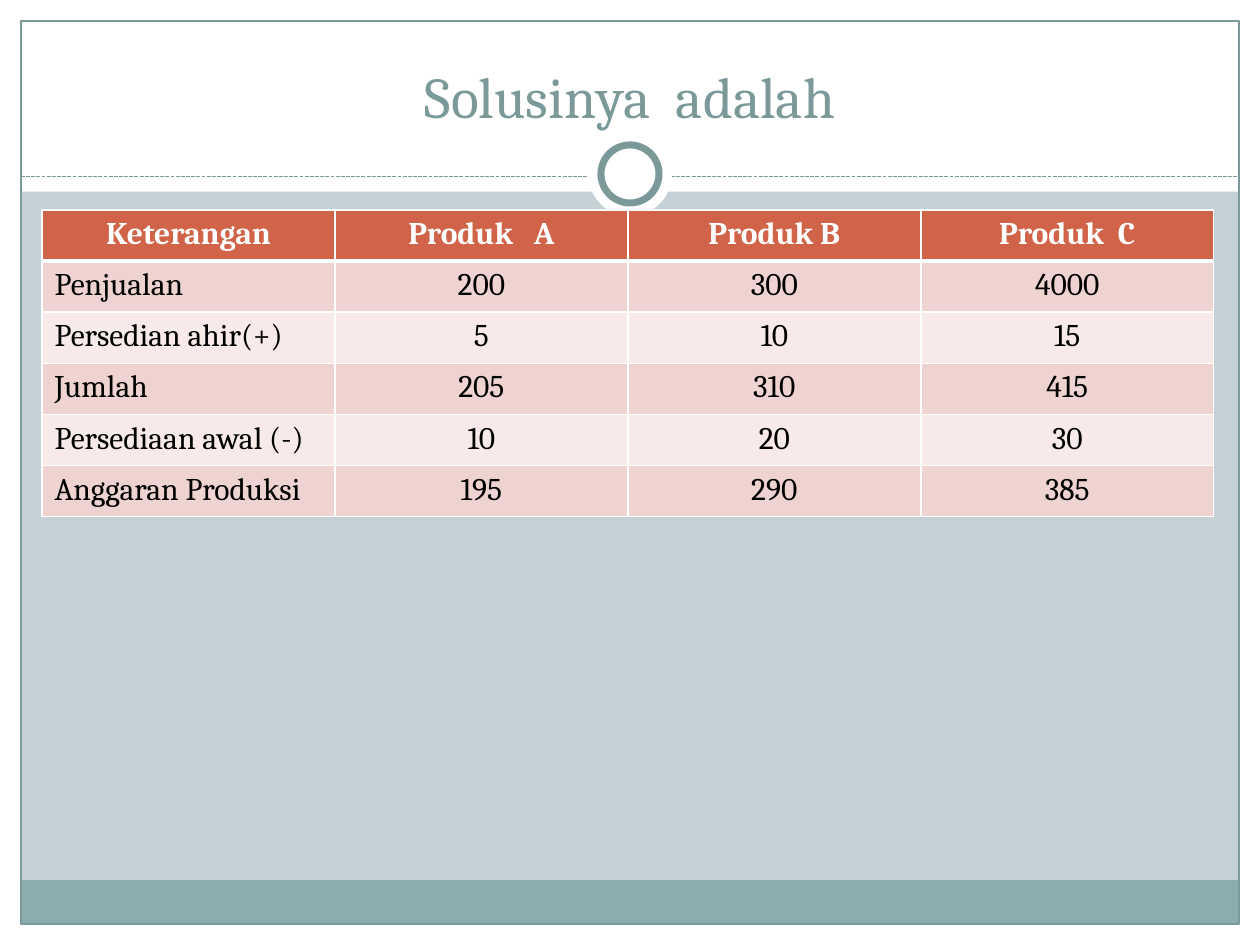
from typing import NamedTuple, Optional

from lxml.etree import SubElement
from pptx import Presentation
from pptx.dml.color import RGBColor
from pptx.enum.dml import MSO_LINE
from pptx.enum.shapes import MSO_CONNECTOR, MSO_SHAPE
from pptx.enum.text import MSO_ANCHOR, PP_ALIGN
from pptx.oxml.ns import qn
from pptx.util import Pt

WHITE = RGBColor(0xFF, 0xFF, 0xFF)
BLACK = RGBColor(0x00, 0x00, 0x00)
BACKGROUND = RGBColor(0xC5, 0xD1, 0xD7)
TEAL = RGBColor(0x7C, 0x99, 0x9A)
FOOTER = RGBColor(0x8C, 0xAD, 0xAE)
HEADER = RGBColor(0xD1, 0x63, 0x49)
BAND_DARK = RGBColor(0xEE, 0xD3, 0xD0)
BAND_LIGHT = RGBColor(0xF7, 0xEA, 0xE9)
FONT = "Cambria"

WIDTH, HEIGHT = 720, 540
MARGIN = 12
RULE_Y = 100.8
COL_WIDTH, ROW_HEIGHT = 167.4, 29.2


class Panel(NamedTuple):
    left: float
    top: float
    width: float
    height: float
    fill: Optional[RGBColor] = WHITE
    line_width: float = 0
    kind: MSO_SHAPE = MSO_SHAPE.RECTANGLE


INNER_W = WIDTH - 2 * MARGIN
FRAME_PANELS = [
    Panel(0, HEIGHT - MARGIN, WIDTH, MARGIN),
    Panel(0, 0, WIDTH, 109.5),
    Panel(0, 0, MARGIN, HEIGHT),
    Panel(WIDTH - MARGIN, 0, MARGIN, HEIGHT),
    Panel(MARGIN, 503, INNER_W, 25, FOOTER),
    Panel(MARGIN, MARGIN, INNER_W, HEIGHT - 2 * MARGIN, None, 0.75),
]
RING_PANELS = [
    Panel(336, 75.4, 48, 48, kind=MSO_SHAPE.OVAL),
    Panel(343.4, 82.8, 33.2, 33.2, WHITE, 4, MSO_SHAPE.OVAL),
]
ROWS = [
    ("Keterangan", "Produk   A", "Produk B", "Produk  C"),
    ("Penjualan", "200", "300", "4000"),
    ("Persedian ahir(+)", "5", "10", "15"),
    ("Jumlah", "205", "310", "415"),
    ("Persediaan awal (-)", "10", "20", "30"),
    ("Anggaran Produksi", "195", "290", "385"),
]


def draw_panel(s, panel: Panel) -> None:
    sp = s.shapes.add_shape(panel.kind, Pt(panel.left), Pt(panel.top),
                            Pt(panel.width), Pt(panel.height))
    sp.shadow.inherit = False
    if panel.fill is None:
        sp.fill.background()
    else:
        sp.fill.solid()
        sp.fill.fore_color.rgb = panel.fill
    if panel.line_width:
        sp.line.color.rgb = TEAL
        sp.line.width = Pt(panel.line_width)
    else:
        sp.line.fill.background()


def draw_rule(s) -> None:
    rule = s.shapes.add_connector(MSO_CONNECTOR.STRAIGHT, Pt(MARGIN), Pt(RULE_Y),
                                  Pt(WIDTH - MARGIN), Pt(RULE_Y))
    rule.line.color.rgb = TEAL
    rule.line.width = Pt(0.75)
    rule.line.dash_style = MSO_LINE.SQUARE_DOT
    SubElement(rule._element.spPr, qn("a:effectLst"))


def style_paragraph(p, size: float, color: RGBColor, align: PP_ALIGN,
                    bold: bool = False) -> None:
    p.alignment = align
    for r in p.runs:
        r.font.name, r.font.size, r.font.bold = FONT, Pt(size), bold
        r.font.color.rgb = color


def draw_title(s, text: str) -> None:
    tf = s.shapes.add_textbox(Pt(24), Pt(18), Pt(672), Pt(60)).text_frame
    tf.word_wrap = True
    tf.vertical_anchor = MSO_ANCHOR.BOTTOM
    tf.text = text
    style_paragraph(tf.paragraphs[0], 33, TEAL, PP_ALIGN.CENTER)


def set_borders(cell, row: int) -> None:
    widths = {"L": 1, "R": 1, "T": 3 if row == 1 else 1, "B": 3 if row == 0 else 1}
    tc_pr = cell._tc.get_or_add_tcPr()
    for side, width in widths.items():
        ln = SubElement(tc_pr, qn(f"a:ln{side}"), w=str(Pt(width)))
        fill = SubElement(ln, qn("a:solidFill"))
        SubElement(fill, qn("a:srgbClr"), val=str(WHITE))


def draw_table(s) -> None:
    n_rows, n_cols = len(ROWS), len(ROWS[0])
    table = s.shapes.add_table(n_rows, n_cols, Pt(24), Pt(120), Pt(n_cols * COL_WIDTH),
                               Pt(n_rows * ROW_HEIGHT)).table
    for column in table.columns:
        column.width = Pt(COL_WIDTH)
    for i, values in enumerate(ROWS):
        table.rows[i].height = Pt(ROW_HEIGHT)
        is_header = i == 0
        band = HEADER if is_header else BAND_DARK if i % 2 else BAND_LIGHT
        for j, value in enumerate(values):
            cell = table.cell(i, j)
            set_borders(cell, i)
            cell.fill.solid()
            cell.fill.fore_color.rgb = band
            cell.text_frame.text = value
            align = PP_ALIGN.CENTER if is_header or j else PP_ALIGN.LEFT
            style_paragraph(cell.text_frame.paragraphs[0], 18,
                            WHITE if is_header else BLACK, align, is_header)


def main() -> None:
    prs = Presentation()
    prs.slide_width, prs.slide_height = Pt(WIDTH), Pt(HEIGHT)
    s = prs.slides.add_slide(prs.slide_layouts[6])
    s.background.fill.solid()
    s.background.fill.fore_color.rgb = BACKGROUND

    # Frame, dashed rule and ring
    for panel in FRAME_PANELS:
        draw_panel(s, panel)
    draw_rule(s)
    for panel in RING_PANELS:
        draw_panel(s, panel)

    # Title and production budget
    draw_title(s, "Solusinya  adalah")
    draw_table(s)
    prs.save("out.pptx")


if __name__ == "__main__":
    main()
